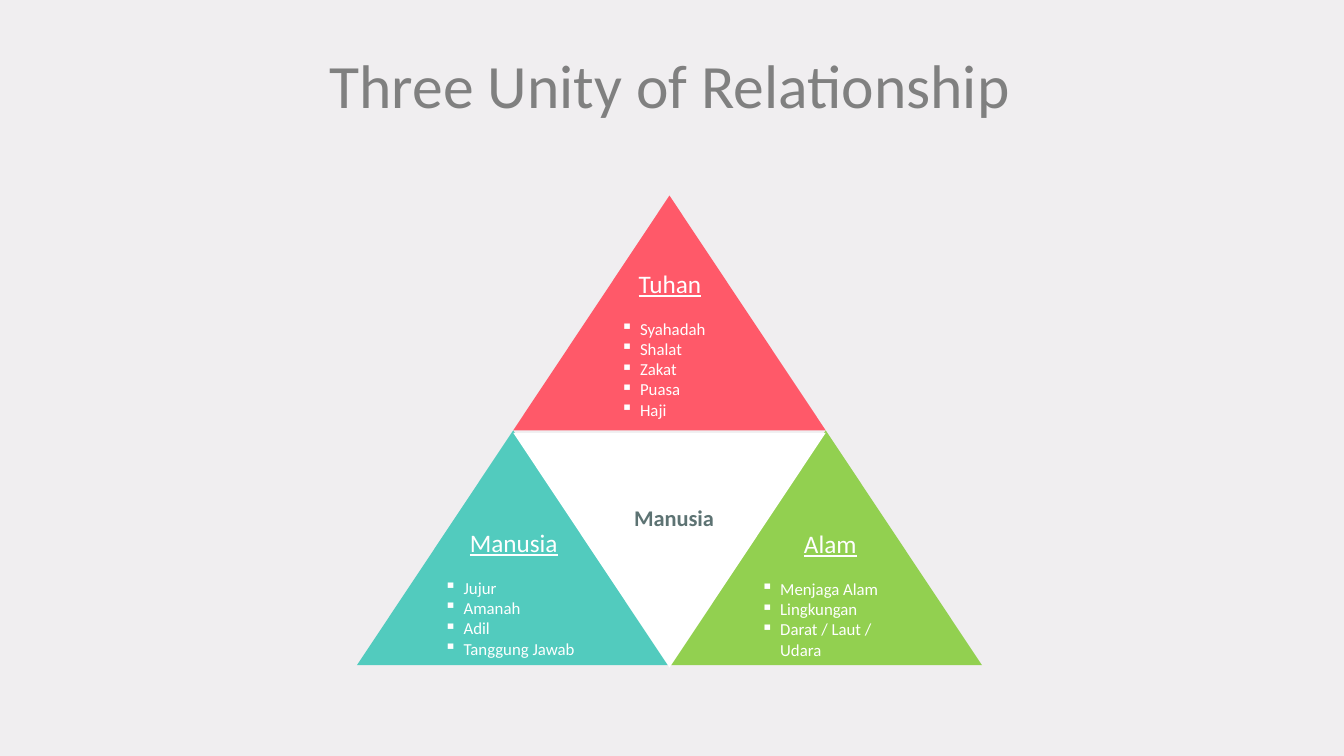
from dataclasses import dataclass

from lxml import etree
from pptx import Presentation
from pptx.dml.color import RGBColor
from pptx.enum.shapes import MSO_SHAPE
from pptx.enum.text import PP_ALIGN
from pptx.oxml.ns import qn
from pptx.util import Inches, Pt


@dataclass(frozen=True)
class Theme:
    font: str = "Calibri"
    background: str = "F0EEF0"
    title: str = "808080"
    red: str = "FF5969"
    green: str = "92D050"
    teal: str = "52CBBE"
    white: str = "FFFFFF"
    slate: str = "5D7373"
    title_size: int = 44
    heading_size: int = 18
    centre_size: int = 16
    item_size: int = 12


THEME = Theme()
WIDTH, HEIGHT = 13.33, 7.5
# Triangles sit on half-width columns and full-height rows.
LEFT, TOP = 3.54, 1.94
COL, ROW = 1.55, 2.33
NOTE_WIDTH = 1.57
BULLET_INDENT = 0.19


def rgb(value):
    return RGBColor.from_string(value)


def add_triangle(slide, col, row, color, rotation=0):
    sp = slide.shapes.add_shape(
        MSO_SHAPE.ISOSCELES_TRIANGLE,
        Inches(LEFT + col * COL), Inches(TOP + row * ROW),
        Inches(2 * COL), Inches(ROW))
    sp.shadow.inherit = False
    sp.fill.solid()
    sp.fill.fore_color.rgb = rgb(color)
    sp.line.fill.background()
    sp.rotation = rotation


def add_text_frame(slide, left, top, width, height):
    box = slide.shapes.add_textbox(
        Inches(left), Inches(top), Inches(width), Inches(height))
    tf = box.text_frame
    tf.word_wrap = True
    return tf


def write(p, text, size, color, bold=False, underline=False):
    p.text = text
    font = p.font
    font.name, font.size, font.color.rgb = THEME.font, Pt(size), rgb(color)
    font.bold, font.underline = bold, underline


def set_bullet(p, margin):
    pPr = p._p.get_or_add_pPr()
    pPr.set("marL", str(Inches(margin)))
    pPr.set("indent", str(-Inches(BULLET_INDENT)))
    bullet = etree.Element(qn("a:buChar"), char="▪")
    pPr.find(qn("a:defRPr")).addprevious(bullet)


def add_heading(tf, text, size, color, **style):
    p = tf.paragraphs[0]
    write(p, text, size, color, **style)
    p.alignment = PP_ALIGN.CENTER
    p.line_spacing = 1.5


def add_note(slide, left, top, heading, items, margin=BULLET_INDENT):
    """Underlined heading over a bulleted list, placed in a triangle."""
    tf = add_text_frame(slide, left, top, NOTE_WIDTH, 0.76 + 0.2 * len(items))
    add_heading(tf, heading, THEME.heading_size, THEME.white, underline=True)
    for i, item in enumerate(items):
        p = tf.add_paragraph()
        write(p, item, THEME.item_size, THEME.white)
        set_bullet(p, margin)
        if i == 0:
            p.space_before = Pt(14.6)


def add_title(slide, text):
    tf = add_text_frame(slide, 1.1, 0.42, 11.09, 0.84)
    p = tf.paragraphs[0]
    write(p, text, THEME.title_size, THEME.title)
    p.alignment = PP_ALIGN.CENTER


def add_centre(slide, text):
    add_triangle(slide, 1, 1.01, THEME.white, rotation=180)
    tf = add_text_frame(slide, 5.9, 4.82, NOTE_WIDTH, 0.56)
    add_heading(tf, text, THEME.centre_size, THEME.slate, bold=True)


def main():
    prs = Presentation()
    prs.slide_width, prs.slide_height = Inches(WIDTH), Inches(HEIGHT)
    slide = prs.slides.add_slide(prs.slide_layouts[6])
    slide.background.fill.solid()
    slide.background.fill.fore_color.rgb = rgb(THEME.background)

    add_title(slide, "Three Unity of Relationship")

    add_triangle(slide, 1, 0, THEME.red)
    add_note(slide, 5.86, 2.46, "Tuhan",
             ["Syahadah", "Shalat", "Zakat", "Puasa", "Haji"],
             margin=0.39)

    add_triangle(slide, 2, 1, THEME.green)
    add_note(slide, 7.45, 5.04, "Alam",
             ["Menjaga Alam", "Lingkungan", "Darat / Laut / Udara"])

    add_triangle(slide, 0, 1, THEME.teal)
    add_note(slide, 4.31, 5.03, "Manusia",
             ["Jujur", "Amanah", "Adil", "Tanggung Jawab"])

    add_centre(slide, "Manusia")
    prs.save("out.pptx")


if __name__ == "__main__":
    main()
